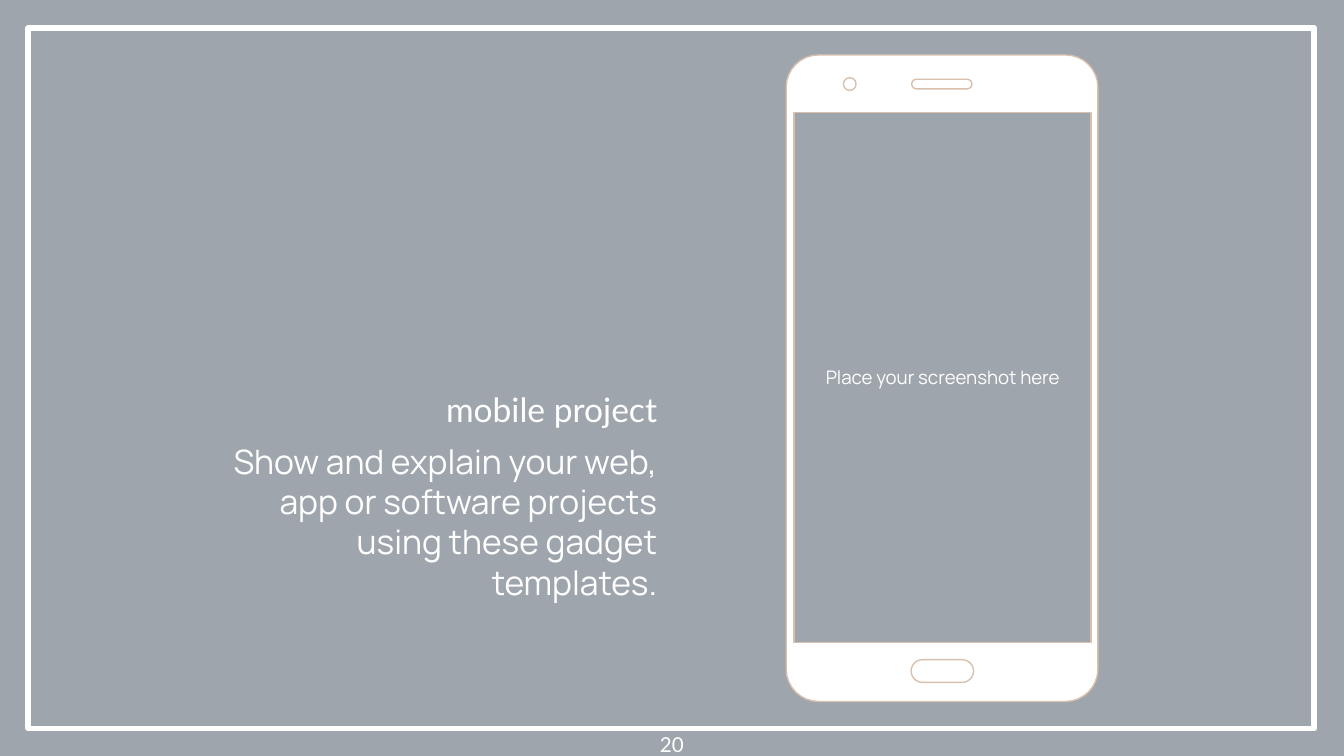
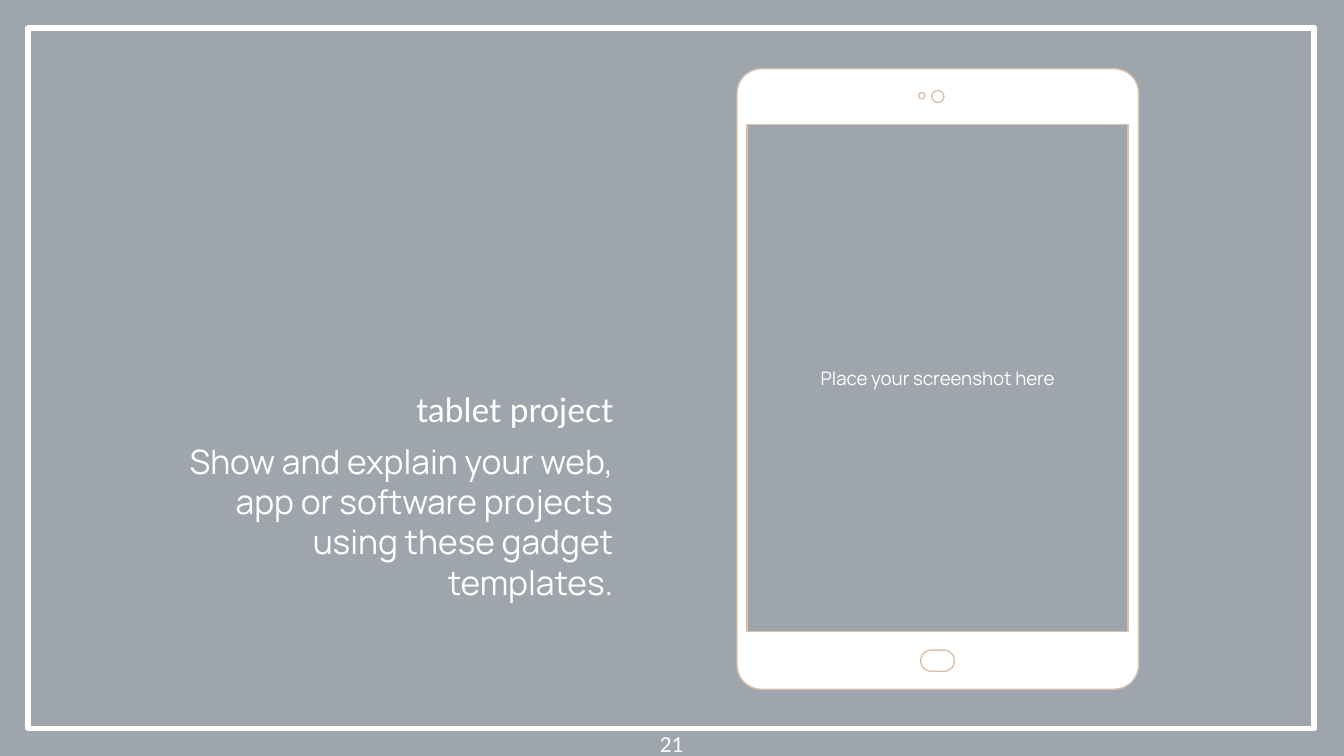
import math
from dataclasses import dataclass

import pptx
import pptx.dml.color
import pptx.enum.shapes
import pptx.enum.text
import pptx.oxml
import pptx.oxml.ns
import pptx.util

Cm = pptx.util.Cm
Pt = pptx.util.Pt
SHAPE = pptx.enum.shapes.MSO_SHAPE
ALIGN = pptx.enum.text.PP_ALIGN
ANCHOR = pptx.enum.text.MSO_ANCHOR


@dataclass(frozen=True)
class Theme:
    veil: str = "021526"
    veil_opacity: int = 38
    white: str = "FFFFFF"
    outline: str = "D8C0AD"
    heading_font: str = "Lato"
    body_font: str = "Manrope"
    caption_size: int = 18
    number_size: int = 11
    screen_size: int = 10
    frame_width: float = 3
    outline_width: float = 0.75


THEME = Theme()
WIDTH, HEIGHT = 25.4, 14.29
PITCH = "Show and explain your web, app or software projects using these gadget templates."
SCREEN_HINT = "Place your screenshot here"

# Boxes are left, top, width, height in centimetres.
PROJECTS = [
    dict(number="20", heading="mobile project", caption_left=3.78,
         body=(14.86, 1.04, 5.89, 12.22), radius=0.61,
         screen=(15.01, 2.13, 5.61, 10.01),
         pills=[(17.22, 12.47, 1.18, 0.43), (17.23, 1.5, 1.14, 0.18)],
         lenses=[(15.94, 1.47, 0.24, 0.24)]),
    dict(number="21", heading="tablet project", caption_left=2.95,
         body=(13.93, 1.3, 7.59, 11.73), radius=0.46,
         screen=(14.12, 2.36, 7.2, 9.58),
         pills=[(17.4, 12.29, 0.64, 0.4)],
         lenses=[(17.36, 1.75, 0.12, 0.12), (17.61, 1.71, 0.23, 0.23)]),
]


def rgb(code):
    return pptx.dml.color.RGBColor.from_string(code)


def style(shape, fill=None, line=None, width=0):
    shape.shadow.inherit = False
    if fill:
        shape.fill.solid()
        shape.fill.fore_color.rgb = rgb(fill)
    else:
        shape.fill.background()
    if line:
        shape.line.color.rgb = rgb(line)
        shape.line.width = Pt(width)
    else:
        shape.line.fill.background()


def add_preset(shapes, preset, box, **look):
    shape = shapes.add_shape(preset, *map(Cm, box))
    style(shape, **look)
    return shape


def add_text(slide, box, lines, align, anchor=ANCHOR.TOP, gap=0):
    """Write lines of (text, font, size), with gap points between them."""
    frame = slide.shapes.add_textbox(*map(Cm, box)).text_frame
    frame.word_wrap = True
    frame.vertical_anchor = anchor
    frame.margin_left = frame.margin_right = Cm(0.25)
    frame.margin_top = frame.margin_bottom = Cm(0.25)
    for index, (text, font, size) in enumerate(lines):
        paragraph = frame.add_paragraph() if index else frame.paragraphs[0]
        paragraph.alignment = align
        if index:
            paragraph.space_before = Pt(gap)
        run = paragraph.add_run()
        run.text = text
        run.font.name = font
        run.font.size = Pt(size)
        run.font.color.rgb = rgb(THEME.white)


def add_backdrop(slide):
    veil = add_preset(slide.shapes, SHAPE.RECTANGLE, (0, 0, WIDTH, HEIGHT),
                      fill=THEME.veil)
    color = veil.fill._xPr.find(".//" + pptx.oxml.ns.qn("a:srgbClr"))
    color.append(pptx.oxml.parse_xml(
        f'<a:alpha {pptx.oxml.ns.nsdecls("a")} val="{THEME.veil_opacity * 1000}"/>'))
    add_preset(slide.shapes, SHAPE.RECTANGLE, (0.53, 0.53, 24.31, 13.24),
               line=THEME.white, width=THEME.frame_width)


def rounded_outline(box, radius, steps=8):
    """Points around a rounded rectangle, clockwise from its right side."""
    left, top, width, height = box
    right, bottom = left + width - radius, top + height - radius
    left, top = left + radius, top + radius
    centres = [(right, bottom), (left, bottom), (left, top), (right, top)]
    return [(Cm(x + radius * math.cos(angle)), Cm(y + radius * math.sin(angle)))
            for corner, (x, y) in enumerate(centres)
            for angle in (math.pi / 2 * (corner + step / steps)
                          for step in range(steps + 1))]


def add_device(slide, body, radius, screen, pills, lenses):
    """Draw a casing with an open screen, its pill-shaped parts and its lenses."""
    parts = slide.shapes.add_group_shape().shapes
    look = dict(fill=THEME.white, line=THEME.outline, width=THEME.outline_width)

    left, top, width, height = screen
    right, bottom = left + width, top + height
    casing = parts.build_freeform(Cm(right), Cm(top))
    casing.add_line_segments([(Cm(x), Cm(y)) for x, y in
                              ((right, bottom), (left, bottom), (left, top))][::1])
    rim = rounded_outline(body, radius)[::-1]
    casing.move_to(*rim[0])
    casing.add_line_segments(rim[1:])
    style(casing.convert_to_shape(), **look)

    for box in pills:
        add_preset(parts, SHAPE.ROUNDED_RECTANGLE, box, **look).adjustments[0] = 0.5
    for box in lenses:
        add_preset(parts, SHAPE.OVAL, box, **look)


def add_project(deck, number, heading, caption_left, **device):
    slide = deck.slides.add_slide(deck.slide_layouts[6])
    add_backdrop(slide)
    add_text(slide, (caption_left, 1.85, 8.89, 9.78),
             [(heading, THEME.heading_font, THEME.caption_size),
              (PITCH, THEME.body_font, THEME.caption_size)],
             ALIGN.RIGHT, ANCHOR.BOTTOM, gap=6)
    add_text(slide, (0, 13.61, WIDTH, 0.58),
             [(number, THEME.heading_font, THEME.number_size)], ALIGN.CENTER)
    add_text(slide, device["screen"],
             [(SCREEN_HINT, THEME.body_font, THEME.screen_size)],
             ALIGN.CENTER, ANCHOR.MIDDLE)
    add_device(slide, **device)


def main():
    deck = pptx.Presentation()
    deck.slide_width, deck.slide_height = Cm(WIDTH), Cm(HEIGHT)
    for project in PROJECTS:
        add_project(deck, **project)
    deck.save("out.pptx")


if __name__ == "__main__":
    main()
